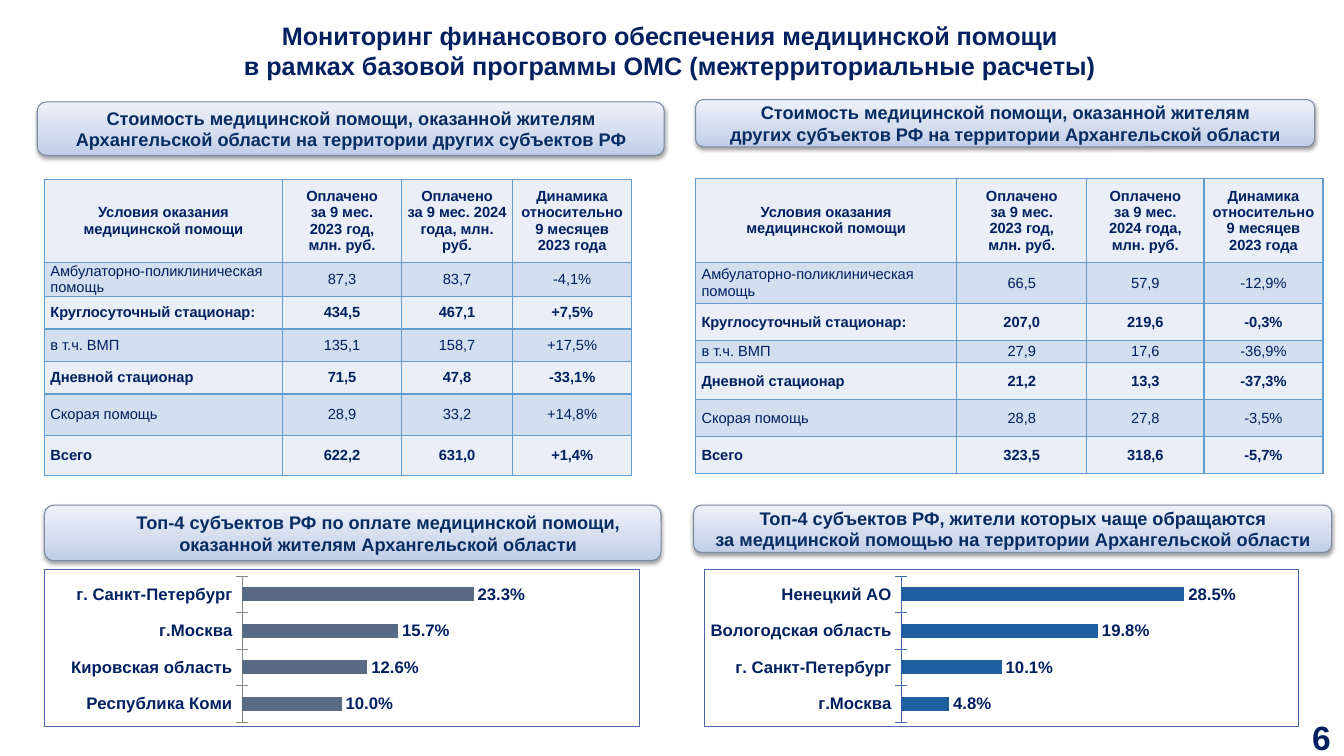
from pptx import Presentation, oxml
from pptx import util as u
from pptx.chart import data
from pptx.dml import color
from pptx.enum import chart as charts
from pptx.enum import shapes, text
from pptx.oxml import ns

NAVY = color.RGBColor(0x00, 0x20, 0x60)
BANNER_TEXT = color.RGBColor(0x07, 0x2C, 0x62)
BANNER_LINE = color.RGBColor(0x7B, 0x8C, 0xA6)
BANNER_DARK = color.RGBColor(0xBF, 0xCD, 0xE7)
BANNER_MID = color.RGBColor(0xD2, 0xDB, 0xED)
BANNER_LIGHT = color.RGBColor(0xED, 0xF1, 0xF9)
TABLE_LINE = color.RGBColor(0x62, 0x9D, 0xD1)
ROW_LIGHT = color.RGBColor(0xEA, 0xEF, 0xF7)
ROW_DARK = color.RGBColor(0xD3, 0xDF, 0xEE)
CHART_LINE = color.RGBColor(0x4A, 0x66, 0xAC)
AXIS_GREY = color.RGBColor(0x86, 0x86, 0x86)
BAR_GREY = color.RGBColor(0x59, 0x6A, 0x85)
BAR_BLUE = color.RGBColor(0x1F, 0x5F, 0xA0)

PAGE_WIDTH, PAGE_HEIGHT = u.Cm(33.87), u.Cm(19.05)
CENTER, LEFT = text.PP_ALIGN.CENTER, text.PP_ALIGN.LEFT
MIDDLE = text.MSO_ANCHOR.MIDDLE

CONDITIONS = ["Амбулаторно-поликлиническая помощь", "Круглосуточный стационар:",
              "в т.ч. ВМП", "Дневной стационар", "Скорая помощь", "Всего"]
CHANGE = "Динамика относительно 9 месяцев 2023 года"
CONDITIONS_HEAD = "Условия оказания\nмедицинской помощи"
PAID_2023 = "Оплачено\vза 9 мес.\v2023 год,\vмлн. руб."

RESIDENTS_ELSEWHERE = [
    ("87,3", "83,7", "-4,1%"), ("434,5", "467,1", "+7,5%"),
    ("135,1", "158,7", "+17,5%"), ("71,5", "47,8", "-33,1%"),
    ("28,9", "33,2", "+14,8%"), ("622,2", "631,0", "+1,4%")]
VISITORS_HERE = [
    ("66,5", "57,9", "-12,9%"), ("207,0", "219,6", "-0,3%"),
    ("27,9", "17,6", "-36,9%"), ("21,2", "13,3", "-37,3%"),
    ("28,8", "27,8", "-3,5%"), ("323,5", "318,6", "-5,7%")]


def style_text(frame, size, ink=NAVY, bold=True, align=CENTER):
    for para in frame.paragraphs:
        para.alignment = align
        para.font.name = "Arial"
        para.font.size = u.Pt(size)
        para.font.bold = bold
        para.font.color.rgb = ink


def add_title(page, box):
    title = page.shapes.title
    title.left, title.top, title.width, title.height = map(u.Cm, box)
    frame = title.text_frame
    frame.text = ("Мониторинг финансового обеспечения медицинской помощи \v"
                  "в рамках базовой программы ОМС (межтерриториальные расчеты) ")
    frame.vertical_anchor = MIDDLE
    style_text(frame, 18)


def add_page_number(page, box):
    number = page.shapes.add_textbox(*map(u.Cm, box))
    number.text_frame.word_wrap = True
    number.text_frame.text = "6"
    style_text(number.text_frame, 24)


def add_banner(page, box, caption, indent=0):
    banner = page.shapes.add_shape(shapes.MSO_SHAPE.ROUNDED_RECTANGLE, *map(u.Cm, box))
    banner.line.color.rgb = BANNER_LINE
    banner.line.width = u.Pt(0.75)

    # Three-stop gradient, dark at the bottom
    banner.fill.gradient()
    banner.fill.gradient_angle = 90
    stops = banner.element.spPr.find(".//" + ns.qn("a:gsLst"))
    for stop in list(stops):
        stops.remove(stop)
    for share, shade in ((0, BANNER_DARK), (35, BANNER_MID), (100, BANNER_LIGHT)):
        stops.append(oxml.parse_xml(
            f'<a:gs {ns.nsdecls("a")} pos="{share * 1000}"><a:srgbClr val="{shade}"/></a:gs>'))

    # Soft shadow below
    banner.shadow.inherit = False
    banner.element.spPr.find(ns.qn("a:effectLst")).append(oxml.parse_xml(
        f'<a:outerShdw {ns.nsdecls("a")} blurRad="40000" dist="20000" dir="5400000" '
        'rotWithShape="0"><a:srgbClr val="000000"><a:alpha val="38000"/></a:srgbClr>'
        '</a:outerShdw>'))

    frame = banner.text_frame
    frame.word_wrap = True
    frame.vertical_anchor = MIDDLE
    frame.text = caption
    frame.paragraphs[0]._p.get_or_add_pPr().set("marL", str(u.Cm(indent)))
    style_text(frame, 13, BANNER_TEXT)


def style_cell(cell, shade):
    properties = cell._tc.get_or_add_tcPr()
    for side in "LRTB":
        properties.append(oxml.parse_xml(
            f'<a:ln{side} {ns.nsdecls("a")} w="12700"><a:solidFill>'
            f'<a:srgbClr val="{TABLE_LINE}"/></a:solidFill></a:ln{side}>'))
    cell.fill.solid()
    cell.fill.fore_color.rgb = shade
    cell.vertical_anchor = MIDDLE
    cell.margin_left = cell.margin_right = u.Cm(0.15)
    cell.margin_top = cell.margin_bottom = 0


def add_cost_table(page, corner, widths, heights, paid_2024, figures):
    size = sum(widths), sum(heights)
    table = page.shapes.add_table(len(heights), len(widths), *map(u.Cm, corner + size)).table
    table.first_row = table.horz_banding = False
    for column, width in zip(table.columns, widths):
        column.width = u.Cm(width)
    for row, height in zip(table.rows, heights):
        row.height = u.Cm(height)

    rows = [(CONDITIONS_HEAD, PAID_2023, paid_2024, CHANGE)]
    rows += [(name, *values) for name, values in zip(CONDITIONS, figures)]
    for r, row in enumerate(rows):
        main_row = r % 2 == 0
        for c, words in enumerate(row):
            cell = table.cell(r, c)
            style_cell(cell, ROW_LIGHT if main_row else ROW_DARK)
            cell.text_frame.text = words
            align = LEFT if r and c == 0 else CENTER
            style_text(cell.text_frame, 10.5, bold=main_row, align=align)


def add_top_chart(page, box, bar_color, axis_color, shares):
    chart_data = data.CategoryChartData(number_format="0.0%")
    chart_data.categories = list(shares)
    chart_data.add_series("Доля", list(shares.values()))
    chart = page.shapes.add_chart(
        charts.XL_CHART_TYPE.BAR_CLUSTERED, *map(u.Cm, box), chart_data).chart
    chart.has_legend = chart.has_title = False
    chart.font.name = "Arial"
    chart.font.size = u.Pt(12)
    chart.font.color.rgb = NAVY

    # Axes
    regions, scale = chart.category_axis, chart.value_axis
    regions.major_tick_mark = charts.XL_TICK_MARK.CROSS
    regions.tick_labels.font.bold = True
    regions.format.line.color.rgb = axis_color
    regions.format.line.width = u.Pt(0.75)
    scale.minimum_scale, scale.maximum_scale = 0, 0.4
    scale.has_major_gridlines = False
    scale.visible = False

    # Bars and their labels
    plot = chart.plots[0]
    plot.gap_width = 160
    plot.vary_by_categories = False
    bars = plot.series[0].format.fill
    bars.solid()
    bars.fore_color.rgb = bar_color
    plot.has_data_labels = True
    labels = plot.data_labels
    labels.show_value = True
    labels.number_format, labels.number_format_is_linked = "0.0%", False
    labels.position = charts.XL_LABEL_POSITION.OUTSIDE_END
    labels.font.bold = True

    # Plot position and frame
    area = chart.element.find(".//" + ns.qn("c:plotArea"))
    for layout in area.findall(ns.qn("c:layout")):
        area.remove(layout)
    places = "".join(f'<c:{key} val="{value}"/>' for key, value in (
        ("layoutTarget", "inner"), ("xMode", "edge"), ("yMode", "edge"),
        ("x", 0.332), ("y", 0.045), ("w", 0.668), ("h", 0.927)))
    area.insert(0, oxml.parse_xml(
        f'<c:layout {ns.nsdecls("c")}><c:manualLayout>{places}</c:manualLayout></c:layout>'))
    chart.element.find(ns.qn("c:chart")).addnext(oxml.parse_xml(
        f'<c:spPr {ns.nsdecls("c", "a")}><a:noFill/><a:ln w="9525"><a:solidFill>'
        f'<a:srgbClr val="{CHART_LINE}"/></a:solidFill></a:ln></c:spPr>'))


def main():
    deck = Presentation()
    deck.slide_width, deck.slide_height = PAGE_WIDTH, PAGE_HEIGHT
    page = deck.slides.add_slide(deck.slide_layouts[5])
    add_title(page, (1.73, 0.25, 30.48, 2.06))

    # Left half: residents treated elsewhere
    add_banner(page, (0.94, 2.57, 15.8, 1.35),
               "Стоимость медицинской помощи, оказанной жителям "
               "Архангельской области на территории других субъектов РФ")
    add_cost_table(page, (1.12, 4.53), (6, 3, 2.8, 3),
                   (2.08, 0.86, 0.82, 0.82, 0.82, 1.04, 1.02),
                   "Оплачено\vза 9 мес. 2024 года, млн. руб.", RESIDENTS_ELSEWHERE)
    add_banner(page, (1.12, 12.73, 15.54, 1.4),
               "Топ-4 субъектов РФ по оплате медицинской помощи, "
               "оказанной жителям Архангельской области", indent=1.27)
    add_top_chart(page, (1.12, 14.33, 15.01, 3.99), BAR_GREY, AXIS_GREY, {
        "Республика Коми": 0.1, "Кировская область": 0.126,
        "г.Москва": 0.157, "г. Санкт-Петербург": 0.233})

    # Right half: visitors treated here
    add_banner(page, (17.53, 2.51, 15.6, 1.19),
               "Стоимость медицинской помощи, оказанной жителям\v"
               "других субъектов РФ на территории Архангельской области")
    add_cost_table(page, (17.53, 4.5), (6.58, 3.28, 2.95, 3),
                   (2.11, 1.04, 0.93, 0.56, 0.93, 0.93, 0.93),
                   "Оплачено\vза 9 мес.\v2024 года,\vмлн. руб.", VISITORS_HERE)
    add_banner(page, (17.48, 12.73, 16.08, 1.19),
               "Топ-4 субъектов РФ, жители которых чаще обращаются\v"
               "за медицинской помощью на территории Архангельской области")
    add_top_chart(page, (17.73, 14.33, 15.01, 3.99), BAR_BLUE, CHART_LINE, {
        "г.Москва": 0.048, "г. Санкт-Петербург": 0.101,
        "Вологодская область": 0.198, "Ненецкий АО": 0.285})

    add_page_number(page, (32.74, 17.93, 1.12, 1.22))
    deck.save("out.pptx")


if __name__ == "__main__":
    main()
